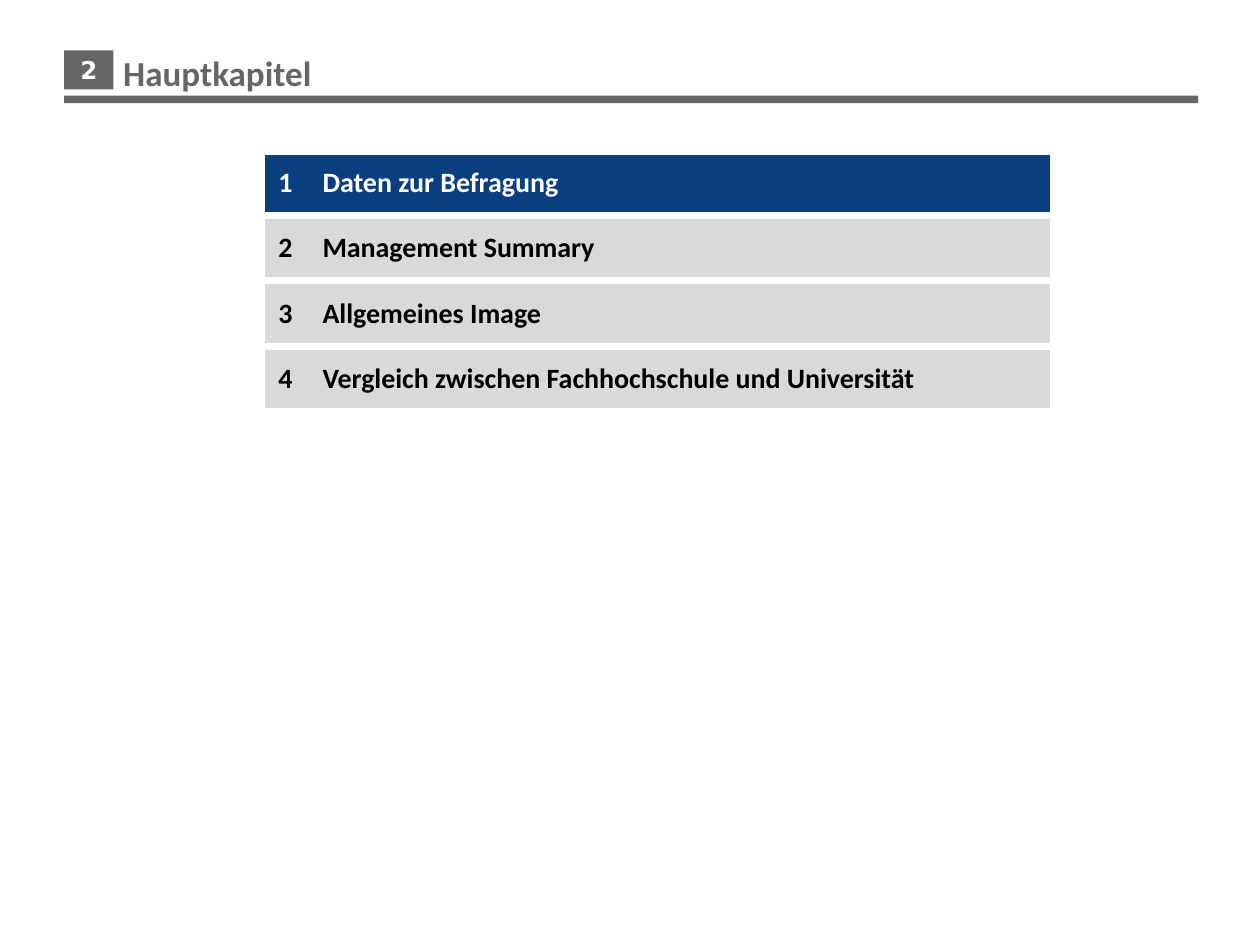
from lxml import etree
from pptx import Presentation
from pptx.dml.color import RGBColor
from pptx.enum.shapes import MSO_SHAPE
from pptx.enum.text import MSO_ANCHOR, PP_ALIGN
from pptx.oxml.ns import qn
from pptx.util import Inches, Pt

RECTANGLE = MSO_SHAPE.RECTANGLE
MIDDLE = MSO_ANCHOR.MIDDLE
CENTER, LEFT = PP_ALIGN.CENTER, PP_ALIGN.LEFT

COLORS = {"gray": "666666", "navy": "0B3E7F", "light": "D9D9D9",
          "white": "FFFFFF", "black": "000000"}
CHAPTERS = ["Daten zur Befragung", "Management Summary", "Allgemeines Image",
            "Vergleich zwischen Fachhochschule und Universität"]
ACTIVE_CHAPTER = 0


def write_text(text_frame, text, color, alignment, font_format):
    paragraph = text_frame.paragraphs[0]
    paragraph.alignment = alignment
    run = paragraph.add_run()
    run.text = text
    run.font.color.rgb = RGBColor.from_string(COLORS[color])
    for name, value in font_format.items():
        setattr(run.font, name, value)


def set_border(cell, side, width):
    """Draw a white border, or none where the width is 0."""
    line = etree.SubElement(cell._tc.get_or_add_tcPr(), qn(f"a:ln{side}"), w=str(Pt(width)))
    if width:
        fill = etree.SubElement(line, qn("a:solidFill"))
        etree.SubElement(fill, qn("a:srgbClr"), val=COLORS["white"])
    else:
        etree.SubElement(line, qn("a:noFill"))


presentation = Presentation()
presentation.slide_width, presentation.slide_height = Inches(10), Inches(7.5)
slide = presentation.slides.add_slide(presentation.slide_layouts[6])

# Header: number box and rule
header_shapes = []
for box in [(0.51, 0.4, 0.39, 0.31), (0.51, 0.76, 9, 0.06)]:
    shape = slide.shapes.add_shape(RECTANGLE, *map(Inches, box))
    shape.shadow.inherit = False
    shape.fill.solid()
    shape.fill.fore_color.rgb = RGBColor.from_string(COLORS["gray"])
    shape.line.fill.background()
    header_shapes.append(shape)
number_frame = header_shapes[0].text_frame
number_frame.word_wrap = False
number_frame.vertical_anchor = MIDDLE
write_text(number_frame, "2", "white", CENTER,
           {"name": "DejaVu Sans", "size": Pt(14), "bold": True})

# Chapter table
column_widths, row_height = [0.39, 5.91], 0.52
table_shape = slide.shapes.add_table(
    len(CHAPTERS), len(column_widths), Inches(2.07), Inches(1.19),
    Inches(sum(column_widths)), Inches(row_height * len(CHAPTERS)))
table = table_shape.table
table.first_row = table.horz_banding = False
for column, width in zip(table.columns, column_widths):
    column.width = Inches(width)

cell_format = {"vertical_anchor": MIDDLE, "margin_left": Inches(0.1), "margin_right": Inches(0.1),
               "margin_top": Inches(0.08), "margin_bottom": Inches(0.08)}
chapter_font = {"name": "Calibri", "size": Pt(16), "bold": True}
for row, chapter in enumerate(CHAPTERS):
    active = row == ACTIVE_CHAPTER
    table.rows[row].height = Inches(row_height)
    for index, (text, alignment) in enumerate([(str(row + 1), CENTER), (chapter, LEFT)]):
        cell = table.cell(row, index)
        for name, value in cell_format.items():
            setattr(cell, name, value)
        borders = {"L": 0 if index else 6, "R": 6 if index else 0,
                   "T": 4.5 if row else 6, "B": 4.5}
        for side, border_width in borders.items():
            set_border(cell, side, border_width)
        cell.fill.solid()
        cell.fill.fore_color.rgb = RGBColor.from_string(COLORS["navy" if active else "light"])
        write_text(cell.text_frame, text, "white" if active else "black", alignment, chapter_font)

# Slide title
title = slide.shapes.add_textbox(Inches(0.88), Inches(0.36), Inches(8.67), Inches(0.47))
title.text_frame.word_wrap = True
write_text(title.text_frame, "Hauptkapitel", "gray", LEFT,
           {"name": "Calibri", "size": Pt(20), "bold": True})

presentation.save("out.pptx")
